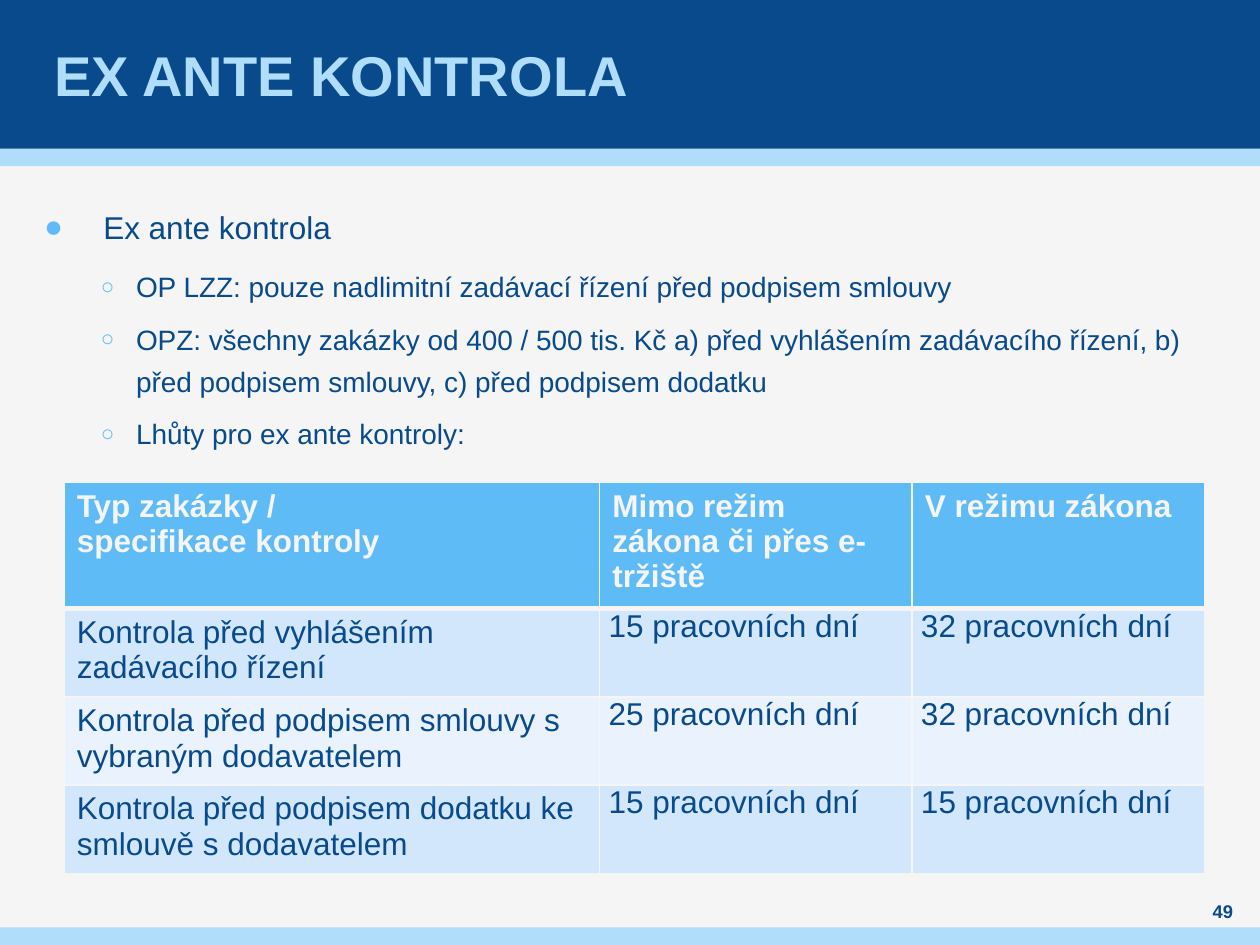
import pptx
import pptx.util
import pptx.dml.color
import pptx.enum.shapes
import pptx.enum.text
import pptx.oxml
import pptx.oxml.ns

Inches, Pt = pptx.util.Inches, pptx.util.Pt
ALIGN = pptx.enum.text.PP_ALIGN
MIDDLE = pptx.enum.text.MSO_ANCHOR.MIDDLE
NS = pptx.oxml.ns.nsdecls("a")
HEX = {"navy": "084A8B", "pale": "AFDDFA", "sky": "5FBBF5", "paper": "F5F5F5",
       "odd": "D2E7FB", "even": "EAF3FD"}
RGB = {name: pptx.dml.color.RGBColor.from_string(code) for name, code in HEX.items()}


def style(para, size, color, bold=False):
    for run in para.runs:
        run.font.name = "Arial"
        run.font.size = Pt(size)
        run.font.bold = bold
        run.font.color.rgb = RGB[color]


def add_box(left, top, width, height, inset=0):
    """Add a wrapping text box and return its text frame."""
    box = slide.shapes.add_textbox(Inches(left), Inches(top), Inches(width), Inches(height))
    frame = box.text_frame
    frame.word_wrap = True
    frame.margin_left = frame.margin_right = Inches(inset)
    frame.margin_top = frame.margin_bottom = 0
    return frame


deck = pptx.Presentation()
deck.slide_width, deck.slide_height = Inches(10), Inches(7.5)
slide = deck.slides.add_slide(deck.slide_layouts[6])
slide.background.fill.solid()
slide.background.fill.fore_color.rgb = RGB["paper"]

# Bands across the page
for top, height, color in [(1.18, 0.14, "pale"), (0, 1.18, "navy"), (7.36, 0.14, "pale")]:
    band = slide.shapes.add_shape(pptx.enum.shapes.MSO_SHAPE.RECTANGLE,
                                  0, Inches(top), Inches(10), Inches(height))
    band.shadow.inherit = False
    band.fill.solid()
    band.fill.fore_color.rgb = RGB[color]
    band.line.fill.background()

# Title
title = add_box(0.39, 0, 9.21, 1.18, 0.04)
title.vertical_anchor = MIDDLE
title.text = "EX ANTE KONTROLA"
style(title.paragraphs[0], 32, "pale", True)

# Bullets: level and text
points = [
    (0, "Ex ante kontrola"),
    (1, "OP LZZ: pouze nadlimitní zadávací řízení před podpisem smlouvy"),
    (1, "OPZ: všechny zakázky od 400 / 500 tis. Kč a) před vyhlášením zadávacího řízení, "
        "b) před podpisem smlouvy, c) před podpisem dodatku"),
    (1, "Lhůty pro ex ante kontroly:"),
]
# For each level: size, line height, gap, margin, indent, mark, mark size
levels = [(18, 28.8, 6, 0.47, -0.47, "●", 100), (16, 24, 3, 0.73, -0.28, "○", 80)]
body = add_box(0.35, 1.55, 9.37, 2.2)
for i, (level, text) in enumerate(points):
    size, line, gap, margin, indent, mark, scale = levels[level]
    para = body.paragraphs[0] if i == 0 else body.add_paragraph()
    para.text = text
    para.level = level
    para.line_spacing = Pt(line)
    para.space_before = para.space_after = Pt(gap)
    style(para, size, "navy")
    props = para._p.get_or_add_pPr()
    props.set("marL", str(Inches(margin)))
    props.set("indent", str(Inches(indent)))
    for xml in (f'<a:buClr {NS}><a:srgbClr val="{HEX["sky"]}"/></a:buClr>',
                f'<a:buSzPct {NS} val="{scale * 1000}"/>',
                f'<a:buFont {NS} typeface="Arial"/>',
                f'<a:buChar {NS} char="{mark}"/>'):
        props.append(pptx.oxml.parse_xml(xml))

# Table of deadlines
rows = [
    ["Typ zakázky /\nspecifikace kontroly", "Mimo režim zákona či přes e-tržiště", "V režimu zákona"],
    ["Kontrola před vyhlášením zadávacího řízení", "15 pracovních dní", "32 pracovních dní"],
    ["Kontrola před podpisem smlouvy s vybraným dodavatelem", "25 pracovních dní", "32 pracovních dní"],
    ["Kontrola před podpisem dodatku ke smlouvě s dodavatelem", "15 pracovních dní", "15 pracovních dní"],
]
widths = [4.25, 2.48, 2.32]
heights = [0.93] + [0.66] * 3
table = slide.shapes.add_table(len(rows), len(widths), Inches(0.51), Inches(3.83),
                               Inches(sum(widths)), Inches(sum(heights))).table
for col, width in zip(table.columns, widths):
    col.width = Inches(width)
for r, row in enumerate(rows):
    table.rows[r].height = Inches(heights[r])
    for c, text in enumerate(row):
        cell = table.cell(r, c)
        cell.text_frame.text = text
        cell.fill.solid()
        cell.fill.fore_color.rgb = RGB["sky" if r == 0 else "odd" if r % 2 else "even"]
        term = r > 0 and c > 0
        if term:
            cell.margin_left = cell.margin_right = Inches(0.07)
            cell.margin_top = cell.margin_bottom = 0
        for para in cell.text_frame.paragraphs:
            style(para, 18, "navy" if r else "paper", r == 0)
            if term:
                para.space_before = para.space_after = Pt(3)
        # Thin rules, with a thick one under the header
        for i, side in enumerate("LRTB"):
            thick = (r, side) in [(0, "B"), (1, "T")]
            cell._tc.get_or_add_tcPr().insert(i, pptx.oxml.parse_xml(
                f'<a:ln{side} {NS} w="{Pt(3 if thick else 1)}"><a:solidFill>'
                f'<a:srgbClr val="{HEX["paper"]}"/></a:solidFill></a:ln{side}>'))

# Page number
page = add_box(9.45, 7.13, 0.51, 0.2)
page.vertical_anchor = MIDDLE
page.text = "49"
page.paragraphs[0].alignment = ALIGN.CENTER
style(page.paragraphs[0], 10.5, "navy", True)

deck.save("out.pptx")
